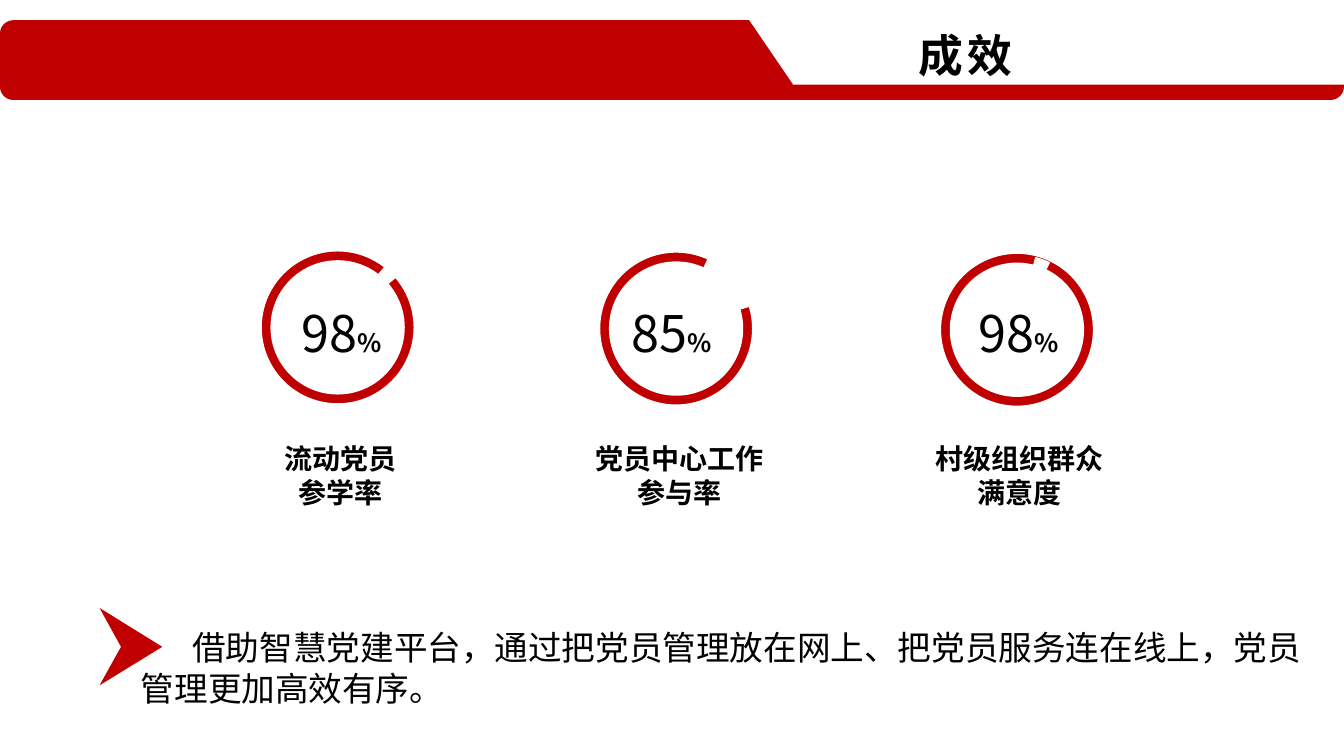
from dataclasses import dataclass

from lxml import etree
from pptx import Presentation
from pptx.dml.color import RGBColor
from pptx.enum import shapes, text
from pptx.oxml import ns
from pptx.util import Cm, Pt

COLOURS = {"red": "C00000", "white": "FFFFFF", "ink": "000000"}
FONT = "Noto Sans CJK SC"
KIND = shapes.MSO_SHAPE
CENTER = text.PP_ALIGN.CENTER

LABEL_LEFT, LABEL_STEP = 4.98, 8.56
RING_SIZE, GAP_HEIGHT = 3.86, 3.78
RING_THICKNESS = 0.066
ARROW_POINTS = [(4.09, 16.3), (2.51, 17.27), (3.05, 16.3), (2.51, 15.32)]
BODY = "借助智慧党建平台，通过把党员管理放在网上、把党员服务连在线上，党员管理更加高效有序。"


@dataclass(frozen=True)
class Span:
    words: str
    size: float
    bold: bool = False


@dataclass(frozen=True)
class Result:
    """One ring: positions in cm, gap angles in degrees clockwise from the right."""
    percent: str
    label: tuple[str, str]
    ring: tuple[float, float]
    gap: tuple[float, float]
    gap_angles: tuple[float, float]
    value_left: float


RESULTS = [
    Result("98", ("流动党员", "参学率"), (6.58, 6.32), (6.55, 6.32), (309.5, 320.6), 7.34),
    Result("85", ("党员中心工作", "参与率"), (15.11, 6.35), (15.11, 6.38), (294.86, 343.33), 15.67),
    Result("98", ("村级组织群众", "满意度"), (23.7, 6.38), (23.67, 6.43), (285.43, 296.36), 24.41),
]


def paint(shape, fill: str, line: str | None = None) -> None:
    shape.shadow.inherit = False
    shape.fill.solid()
    shape.fill.fore_color.rgb = RGBColor.from_string(COLOURS[fill])
    if line:
        shape.line.color.rgb = RGBColor.from_string(COLOURS[line])
        shape.line.width = Pt(1)
    else:
        shape.line.fill.background()


def add_preset(page, kind, left: float, top: float, width: float, height: float,
               fill: str, line: str | None = None, adjust: tuple[float, ...] = ()):
    shape = page.shapes.add_shape(kind, Cm(left), Cm(top), Cm(width), Cm(height))
    for index, value in enumerate(adjust):
        shape.adjustments[index] = value
    paint(shape, fill, line)
    return shape


def add_text(page, paragraphs: list[list[Span]], left: float, top: float,
             width: float, height: float, *, align=None, spacing: float = 1.26,
             tracking: float = 0, indent: float = 0) -> None:
    """Spacing is in multiples of the font size, tracking in points, indent in cm."""
    box = page.shapes.add_textbox(Cm(left), Cm(top), Cm(width), Cm(height))
    frame = box.text_frame
    frame.word_wrap = True
    frame.auto_size = text.MSO_AUTO_SIZE.SHAPE_TO_FIT_TEXT
    for index, spans in enumerate(paragraphs):
        para = frame.add_paragraph() if index else frame.paragraphs[0]
        para.alignment = align
        para.line_spacing = Pt(round(spans[0].size * spacing, 1))
        if indent:
            para._p.get_or_add_pPr().set("indent", str(Cm(indent)))
        for span in spans:
            run = para.add_run()
            run.text = span.words
            run.font.size = Pt(span.size)
            run.font.bold = span.bold
            run.font.name = FONT
            run.font.color.rgb = RGBColor.from_string(COLOURS["ink"])
            properties = run._r.get_or_add_rPr()
            etree.SubElement(properties, ns.qn("a:ea")).set("typeface", FONT)
            if tracking:
                properties.set("spc", str(int(tracking * 100)))


def add_header(page) -> None:
    add_preset(page, KIND.ROUNDED_RECTANGLE, 0, 0.51, 33.87, 2.01, "red")
    panel = add_preset(page, KIND.PARALLELOGRAM, 16.56, -2.9, 27.51, 5.03,
                       "white", adjust=(0.682,))
    panel._element.spPr.find(ns.qn("a:xfrm")).set("flipH", "1")
    add_text(page, [[Span("成效", 32, True)]], 22.91, 0.51, 17.2, 1.63, tracking=3)


def add_result(page, result: Result, column: int) -> None:
    add_preset(page, KIND.DONUT, *result.ring, RING_SIZE, RING_SIZE,
               "red", "white", (RING_THICKNESS,))
    # Angles are stored in 1/60000 degree, adjustments in 1/100000.
    start, end = (angle * 0.6 for angle in result.gap_angles)
    add_preset(page, KIND.PIE, *result.gap, RING_SIZE, GAP_HEIGHT,
               "white", "white", (start, end))
    add_text(page, [[Span(result.percent, 36), Span("%", 18, True)]],
             result.value_left, 7.42, 3.5, 1.8)
    add_text(page, [[Span(line, 20, True)] for line in result.label],
             LABEL_LEFT + column * LABEL_STEP, 11, 7.19, 1.96,
             align=CENTER, spacing=1.21)


def add_summary(page) -> None:
    add_text(page, [[Span(BODY, 24)]], 3.3, 15.67, 29.8, 2.31,
             spacing=1.21, indent=1.3)
    start, *others = [(Cm(x), Cm(y)) for x, y in ARROW_POINTS]
    outline = page.shapes.build_freeform(*start)
    outline.add_line_segments(others, close=True)
    paint(outline.convert_to_shape(), "red")


def main() -> None:
    deck = Presentation()
    deck.slide_width, deck.slide_height = Cm(33.87), Cm(19.05)
    page = deck.slides.add_slide(deck.slide_layouts[6])
    add_header(page)
    for column, result in enumerate(RESULTS):
        add_result(page, result, column)
    add_summary(page)
    deck.save("out.pptx")


if __name__ == "__main__":
    main()
